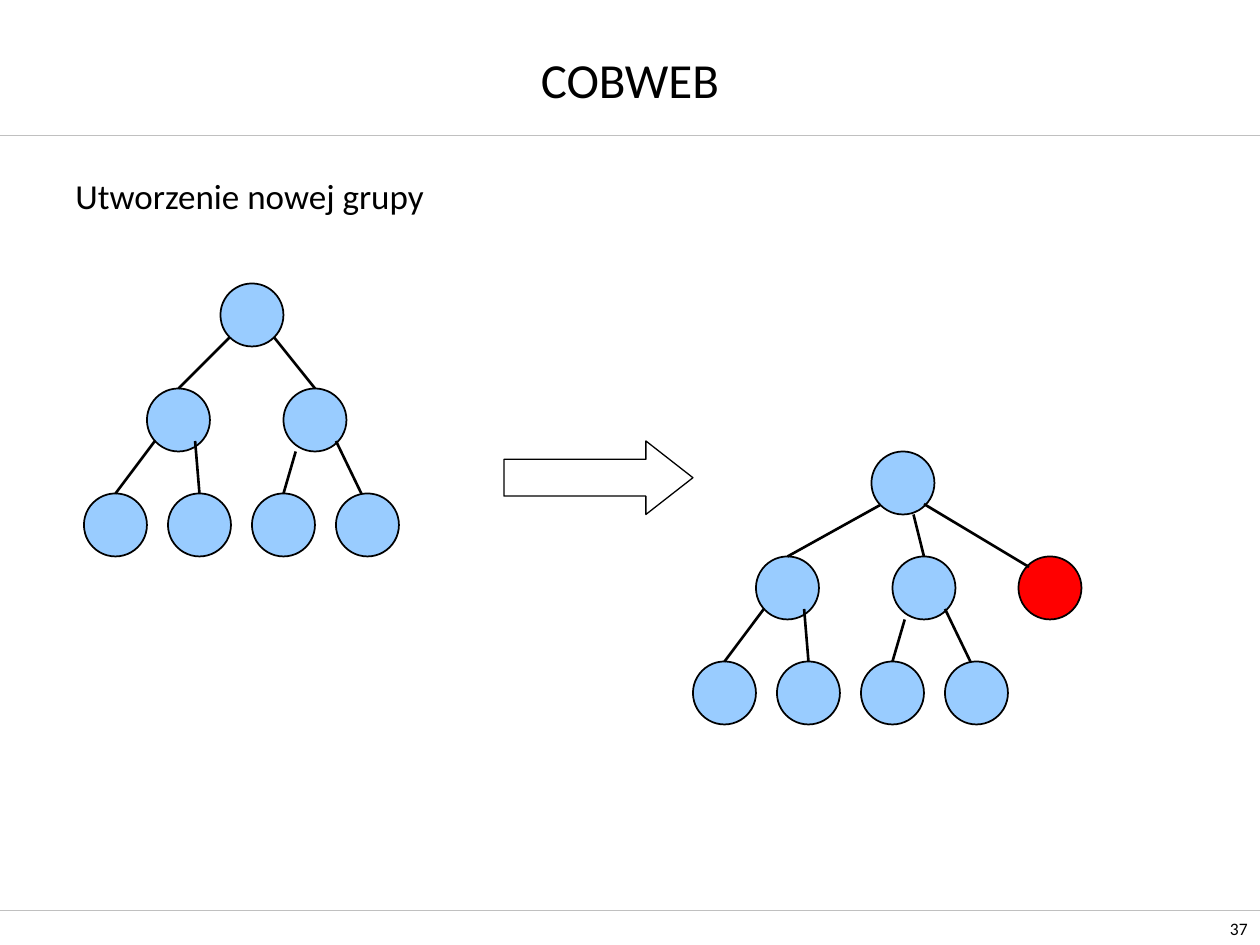
from dataclasses import dataclass

from lxml.etree import SubElement
from pptx import Presentation
from pptx.dml.color import RGBColor
from pptx.enum.shapes import MSO_CONNECTOR, MSO_SHAPE
from pptx.enum.text import MSO_ANCHOR, MSO_AUTO_SIZE, PP_ALIGN
from pptx.oxml.ns import qn
from pptx.shapes.shapetree import GroupShapes, SlideShapes
from pptx.slide import Slide
from pptx.util import Pt

COLORS = {
    "ink": "000000",
    "rule": "C0C0C0",
    "node": "99CCFF",
    "new_node": "FF0000",
}
FONT = "Calibri"
SLIDE_WIDTH, SLIDE_HEIGHT = 720, 540
NODE_SIZE = 36
LEVEL_STEP = 60
LEAF_STEP = 48


@dataclass(frozen=True)
class Node:
    left: float
    top: float
    color: str = "node"


@dataclass(frozen=True)
class Edge:
    start: tuple[float, float]
    end: tuple[float, float]


@dataclass(frozen=True)
class Tree:
    left: float
    top: float
    root: Node
    root_edges: tuple[Edge, ...]
    new_nodes: tuple[Node, ...] = ()
    new_edges: tuple[Edge, ...] = ()


@dataclass(frozen=True)
class Label:
    text: str
    left: float
    top: float
    width: float
    height: float
    size: float
    align: PP_ALIGN
    anchor: MSO_ANCHOR
    wrap: bool = True


BRANCH_NODES = (
    Node(36, 0),
    Node(114, 0),
    *(Node(index * LEAF_STEP, LEVEL_STEP) for index in range(4)),
)
BRANCH_EDGES = (
    Edge((40.5, 30), (18, 60)),
    Edge((63.5, 30), (66, 60)),
    Edge((144, 30), (158.5, 60)),
    Edge((121, 36), (114, 60)),
)
TREES = (
    Tree(
        48, 222, Node(78, -LEVEL_STEP),
        (Edge((84, -30), (54, 0)), Edge((108, -30), (132, 0))),
    ),
    Tree(
        396, 318, Node(102, -LEVEL_STEP),
        (Edge((108, -30), (54, 0)), Edge((126, -24), (132, 0))),
        (Node(186, 0, "new_node"),),
        (Edge((132, -30), (192, 6)),),
    ),
)
LABELS = (
    Label("37", 683, 520, 37, 20, 10, PP_ALIGN.RIGHT, MSO_ANCHOR.BOTTOM),
    Label("Utworzenie nowej grupy", 36, 96, 228, 31, 20,
          PP_ALIGN.LEFT, MSO_ANCHOR.TOP, wrap=False),
    Label("COBWEB", 54, 0, 612, 90, 28, PP_ALIGN.CENTER, MSO_ANCHOR.MIDDLE),
)


def rgb(name: str) -> RGBColor:
    return RGBColor.from_string(COLORS[name])


def draw_line(shapes: SlideShapes | GroupShapes, start: tuple[float, float],
              end: tuple[float, float], color: str, width: float) -> None:
    line = shapes.add_connector(
        MSO_CONNECTOR.STRAIGHT, *(Pt(value) for value in (*start, *end)))
    line.line.color.rgb = rgb(color)
    line.line.width = Pt(width)
    SubElement(line._element.spPr, qn("a:effectLst"))


def draw_node(shapes: GroupShapes, tree: Tree, node: Node) -> None:
    circle = shapes.add_shape(
        MSO_SHAPE.OVAL, Pt(tree.left + node.left), Pt(tree.top + node.top),
        Pt(NODE_SIZE), Pt(NODE_SIZE))
    circle.shadow.inherit = False
    circle.fill.solid()
    circle.fill.fore_color.rgb = rgb(node.color)
    circle.line.color.rgb = rgb("ink")
    circle.line.width = Pt(1)


def draw_edge(shapes: GroupShapes, tree: Tree, edge: Edge) -> None:
    start, end = (
        (tree.left + x, tree.top + y) for x, y in (edge.start, edge.end))
    draw_line(shapes, start, end, "ink", 1.5)


def draw_tree(slide: Slide, tree: Tree) -> None:
    shapes = slide.shapes.add_group_shape().shapes
    for node in BRANCH_NODES:
        draw_node(shapes, tree, node)
    for edge in tree.root_edges + BRANCH_EDGES:
        draw_edge(shapes, tree, edge)
    for node in (tree.root, *tree.new_nodes):
        draw_node(shapes, tree, node)
    for edge in tree.new_edges:
        draw_edge(shapes, tree, edge)


def draw_arrow(slide: Slide) -> None:
    arrow = slide.shapes.add_shape(
        MSO_SHAPE.RIGHT_ARROW, Pt(288), Pt(252), Pt(108), Pt(42))
    arrow.adjustments[0] = 0.5
    arrow.adjustments[1] = 0.64
    arrow.shadow.inherit = False
    arrow.fill.background()
    arrow.line.color.rgb = rgb("ink")
    arrow.line.width = Pt(0.75)


def draw_label(slide: Slide, label: Label) -> None:
    box = slide.shapes.add_textbox(
        Pt(label.left), Pt(label.top), Pt(label.width), Pt(label.height))
    frame = box.text_frame
    frame.text = label.text
    frame.word_wrap = label.wrap
    frame.vertical_anchor = label.anchor
    if not label.wrap:
        frame.auto_size = MSO_AUTO_SIZE.SHAPE_TO_FIT_TEXT
    para = frame.paragraphs[0]
    para.alignment = label.align
    span = para.runs[0]
    span.font.name = FONT
    span.font.size = Pt(label.size)
    span.font.color.rgb = rgb("ink")


def main() -> None:
    deck = Presentation()
    deck.slide_width, deck.slide_height = Pt(SLIDE_WIDTH), Pt(SLIDE_HEIGHT)
    page = deck.slides.add_slide(deck.slide_layouts[6])
    for top in (77, 520):
        draw_line(page.shapes, (0, top), (SLIDE_WIDTH, top), "rule", 0.25)
    for tree in TREES:
        draw_tree(page, tree)
    draw_arrow(page)
    for label in LABELS:
        draw_label(page, label)
    deck.save("out.pptx")


if __name__ == "__main__":
    main()
